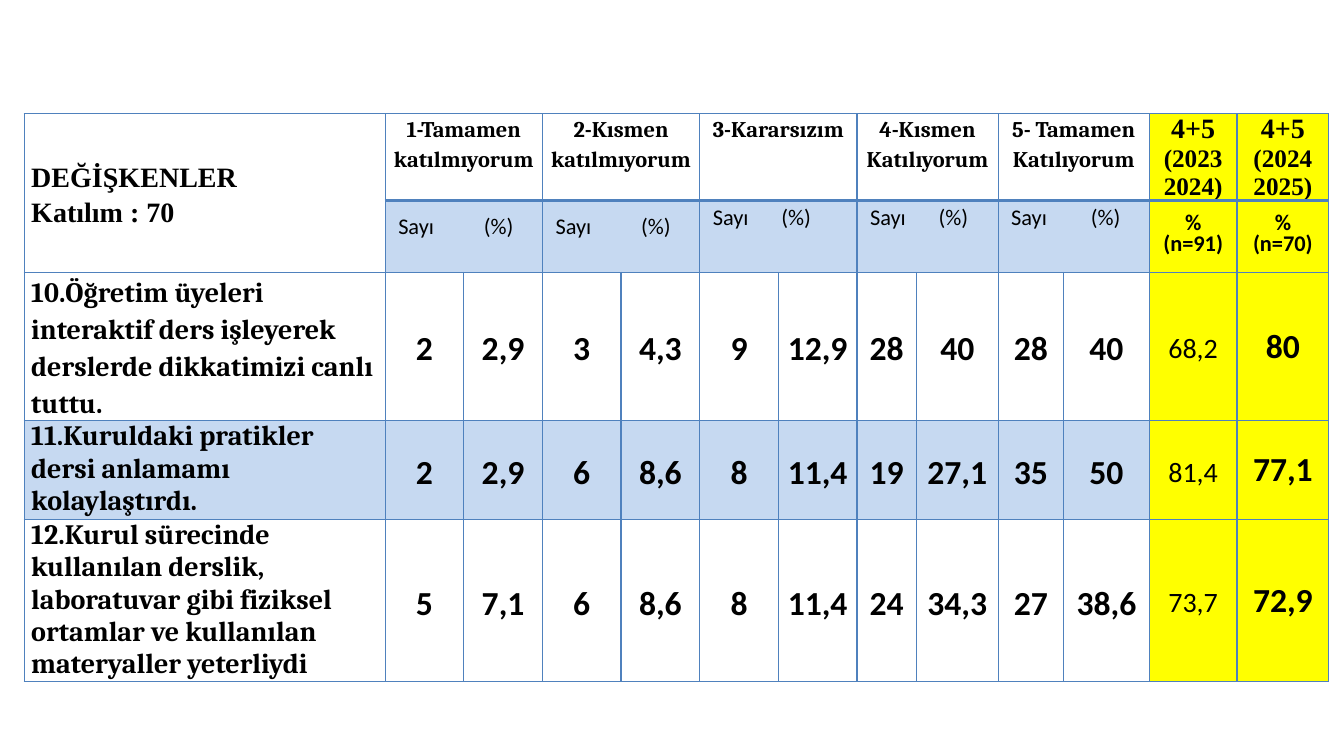
import pptx
import pptx.util
import pptx.dml.color
import pptx.enum.text
import pptx.oxml
import pptx.oxml.ns
from pptx.util import Inches

COLORS = {"text": "000000", "border": "4F81BD", "band": "C6D9F1", "score": "FFFF00"}
COLUMNS = [3.58] + [0.78] * 6 + [0.59, 0.81, 0.65, 0.85, 0.87, 0.91]
ROWS = [0.86, 0.71, 1.47, 0.98, 1.61]
ANSWERS = [
    ("1-Tamamen katılmıyorum", 0.85, 0.1),
    ("2-Kısmen katılmıyorum", 0.85, 0.1),
    ("3-Kararsızım", 0.68, 0.28),
    ("4-Kısmen Katılıyorum", 0.68, 0.28),
    ("5- Tamamen Katılıyorum", 0.79, 0.28),
]
YEARS = [("(2023 2024)", "(n=91)"), ("(2024 2025)", "(n=70)")]
QUESTIONS = [
    ("10.Öğretim üyeleri interaktif ders işleyerek derslerde dikkatimizi canlı tuttu.", 1.15,
     ["2", "2,9", "3", "4,3", "9", "12,9", "28", "40", "28", "40"], "68,2", "80"),
    ("11.Kuruldaki pratikler dersi anlamamı kolaylaştırdı.", 1.0,
     ["2", "2,9", "6", "8,6", "8", "11,4", "19", "27,1", "35", "50"], "81,4", "77,1"),
    ("12.Kurul sürecinde kullanılan derslik, laboratuvar gibi fiziksel ortamlar ve "
     "kullanılan materyaller yeterliydi", 1.0,
     ["5", "7,1", "6", "8,6", "8", "11,4", "24", "34,3", "27", "38,6"], "73,7", "72,9"),
]


class SurveySlide:
    def __init__(self, prs):
        self.s = prs.slides.add_slide(prs.slide_layouts[6])

    def table(self, left, top):
        frame = self.s.shapes.add_table(len(ROWS), len(COLUMNS), Inches(left), Inches(top),
                                        Inches(sum(COLUMNS)), Inches(sum(ROWS)))
        self.grid = frame.table
        self.grid.first_row = False
        self.grid.horz_banding = False
        for column, width in zip(self.grid.columns, COLUMNS):
            column.width = Inches(width)
        for row, height in zip(self.grid.rows, ROWS):
            row.height = Inches(height)

    def frame_cell(self, row, col):
        cell = self.grid.cell(row, col)
        if col >= 11:
            fill = "score"
        elif row == 3 or (row == 1 and col):
            fill = "band"
        else:
            fill = None
        if fill:
            cell.fill.solid()
            cell.fill.fore_color.rgb = pptx.dml.color.RGBColor.from_string(COLORS[fill])
        else:
            cell.fill.background()
        thick = {(0, "B"), (1, "T")} if col else set()
        for index, side in enumerate("LRTB"):
            width = pptx.util.Pt(2.25 if (row, side) in thick else 1)
            line = pptx.oxml.parse_xml(
                f'<a:ln{side} {pptx.oxml.ns.nsdecls("a")} w="{width}"><a:solidFill>'
                f'<a:srgbClr val="{COLORS["border"]}"/></a:solidFill></a:ln{side}>')
            cell._tc.get_or_add_tcPr().insert(index, line)

    def text(self, row, col, lines, font="Calibri", bold=True, center=True, spacing=1.0,
             middle=True, margins=(0.07, 0, 0.07, 0)):
        cell = self.grid.cell(row, col)
        anchor = pptx.enum.text.MSO_ANCHOR
        cell.vertical_anchor = anchor.MIDDLE if middle else anchor.TOP
        cell.margin_left, cell.margin_top, cell.margin_right, cell.margin_bottom = map(Inches, margins)
        tf = cell.text_frame
        align = pptx.enum.text.PP_ALIGN
        for index, (content, size) in enumerate(lines):
            p = tf.add_paragraph() if index else tf.paragraphs[0]
            p.alignment = align.CENTER if center else align.LEFT
            p.line_spacing = spacing
            r = p.add_run()
            r.text = content
            r.font.size = pptx.util.Pt(size)
            r.font.name = font
            r.font.bold = bold
            r.font.color.rgb = pptx.dml.color.RGBColor.from_string(COLORS["text"])

    def tab_stop(self, row, col, position):
        p = self.grid.cell(row, col).text_frame.paragraphs[0]
        tabs = pptx.oxml.parse_xml(
            f'<a:tabLst {pptx.oxml.ns.nsdecls("a")}><a:tab pos="{Inches(position)}" algn="l"/></a:tabLst>')
        p._p.get_or_add_pPr().append(tabs)

    def merge(self, row, col, last_row, last_col):
        self.grid.cell(row, col).merge(self.grid.cell(last_row, last_col))

    def headings(self):
        self.merge(0, 0, 1, 0)
        self.text(0, 0, [("DEĞİŞKENLER", 20), ("Katılım : 70", 20)], "Times New Roman",
                  center=False, spacing=1.15)
        for index, (answer, stop, lift) in enumerate(ANSWERS):
            col = 1 + 2 * index
            for row in (0, 1):
                self.merge(row, col, row, col + 1)
            self.text(0, col, [(answer, 16)], "Cambria", spacing=1.15, middle=False)
            self.text(1, col, [("Sayı\t(%)", 16)], bold=False, center=False,
                      spacing=pptx.util.Pt(13), margins=(0.13, 0, 0.07, lift))
            self.tab_stop(1, col, stop)
        for col, (year, count) in enumerate(YEARS, 11):
            self.text(0, col, [("4+5", 20), (year, 18)], "Times New Roman", middle=False)
            self.text(1, col, [("%", 16), (count, 16)], spacing=pptx.util.Pt(15))

    def question(self, row, wording, spacing, values, previous, current):
        self.text(row, 0, [(wording, 20)], "Cambria", center=False, spacing=spacing, middle=False)
        for col, value in enumerate(values, 1):
            self.text(row, col, [(value, 24)], spacing=1.15)
        self.text(row, 11, [(previous, 20)], bold=False, spacing=1.15)
        self.text(row, 12, [(current, 24)], margins=(0.01, 0.01, 0.01, 0))


def main():
    prs = pptx.Presentation()
    prs.slide_width, prs.slide_height = Inches(13.33), Inches(7.5)
    survey = SurveySlide(prs)
    survey.table(0.24, 1.13)
    for row in range(len(ROWS)):
        for col in range(len(COLUMNS)):
            survey.frame_cell(row, col)
    survey.headings()
    for row, question in enumerate(QUESTIONS, 2):
        survey.question(row, *question)
    prs.save("out.pptx")


if __name__ == "__main__":
    main()
